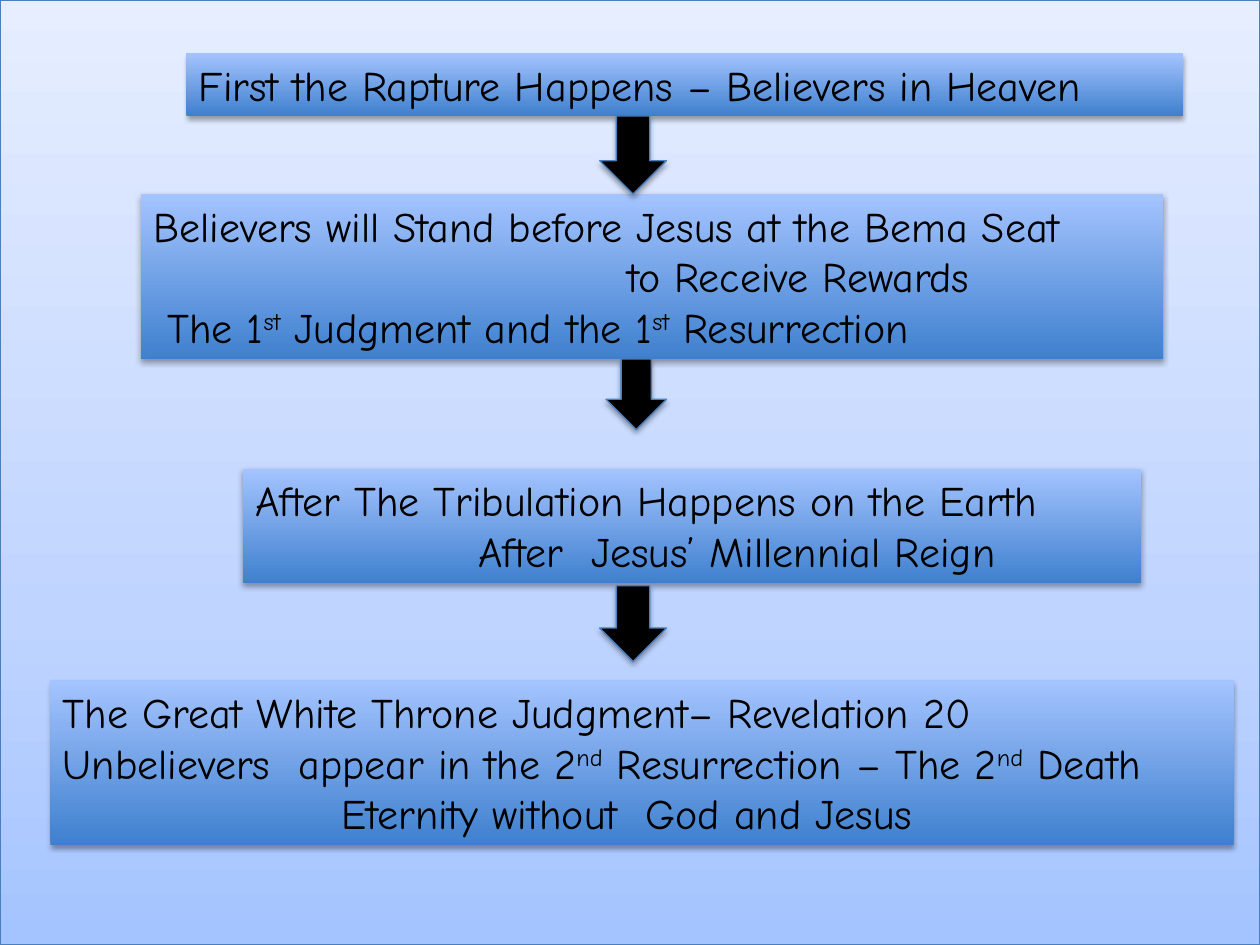
from dataclasses import dataclass

from lxml.etree import SubElement
from pptx import Presentation
from pptx.dml.color import RGBColor as RGB
from pptx.enum.shapes import MSO_SHAPE as SHAPE
from pptx.enum.text import MSO_ANCHOR as ANCHOR
from pptx.enum.text import MSO_AUTO_SIZE as AUTO
from pptx.enum.text import PP_ALIGN as ALIGN
from pptx.oxml.ns import qn
from pptx.util import Inches, Pt


@dataclass(frozen=True)
class Theme:
    font: str = "Comic Neue"
    size: int = 24
    ink: str = "000000"
    border: str = "4B7EBC"
    border_width: float = 0.75
    superscript: int = 30
    # Gradient stops run from bottom to top: (percent, colour)
    backdrop: tuple = ((0, "A4C4FF"), (35, "BFD4FF"), (100, "E6EEFF"))
    panel: tuple = ((0, "3F80CE"), (100, "A4C4FF"))


@dataclass(frozen=True)
class Box:
    left: float
    top: float
    width: float
    height: float


@dataclass(frozen=True)
class Line:
    text: str  # superscripts stand between ^ marks
    indent: float = 0


@dataclass(frozen=True)
class Step:
    box: Box
    lines: tuple


THEME = Theme()

STEPS = (
    Step(Box(1.48, 0.42, 7.91, 0.5), (
        Line("First the Rapture Happens – Believers in Heaven"),
    )),
    Step(Box(1.12, 1.54, 8.11, 1.31), (
        Line("Believers will Stand before Jesus at the Bema Seat"),
        Line("to Receive Rewards", 3.76),
        Line("The 1^st^ Judgment and the 1^st^ Resurrection", 0.11),
    )),
    Step(Box(1.93, 3.72, 7.13, 0.91), (
        Line("After The Tribulation Happens on the Earth"),
        Line("After  Jesus’ Millennial Reign", 1.77),
    )),
    Step(Box(0.4, 5.4, 9.39, 1.31), (
        Line("The Great White Throne Judgment– Revelation 20"),
        Line("Unbelievers  appear in the 2^nd^ Resurrection – The 2^nd^ Death"),
        Line("Eternity without  God and Jesus", 2.21),
    )),
)

ARROWS = (
    Box(4.76, 0.92, 0.53, 0.62),
    Box(4.81, 2.85, 0.48, 0.56),
    Box(4.76, 4.65, 0.53, 0.6),
)


def add_shape(slide, kind: SHAPE, box: Box):
    return slide.shapes.add_shape(
        kind, Inches(box.left), Inches(box.top), Inches(box.width), Inches(box.height))


def add_color(parent, value: str):
    return SubElement(parent, qn("a:srgbClr"), val=value)


def fill_gradient(sp, stops: tuple) -> None:
    sp.fill.gradient()
    sp.fill.gradient_angle = 90
    stop_list = next(sp._element.spPr.iter(qn("a:gsLst")))
    for old in list(stop_list):
        stop_list.remove(old)
    for percent, color in stops:
        add_color(SubElement(stop_list, qn("a:gs"), pos=str(percent * 1000)), color)


def add_shadow(sp, opacity: int = 35, distance: float = 1.8) -> None:
    sp.shadow.inherit = False
    effects = sp._element.spPr.find(qn("a:effectLst"))
    shadow = SubElement(
        effects, qn("a:outerShdw"), blurRad=str(Pt(3.1)), dist=str(Pt(distance)),
        dir="5400000", rotWithShape="0")
    SubElement(add_color(shadow, THEME.ink), qn("a:alpha"), val=str(opacity * 1000))


def add_border(sp) -> None:
    sp.line.color.rgb = RGB.from_string(THEME.border)
    sp.line.width = Pt(THEME.border_width)


def write_line(p, line: Line) -> None:
    p.alignment = ALIGN.LEFT
    p._p.get_or_add_pPr().set("marL", str(Inches(line.indent)))
    for i, part in enumerate(line.text.split("^")):
        r = p.add_run()
        r.text = part
        r.font.name = THEME.font
        r.font.size = Pt(THEME.size)
        r.font.color.rgb = RGB.from_string(THEME.ink)
        if i % 2:
            r._r.get_or_add_rPr().set("baseline", str(THEME.superscript * 1000))


def draw_backdrop(slide, box: Box) -> None:
    sp = add_shape(slide, SHAPE.RECTANGLE, box)
    fill_gradient(sp, THEME.backdrop)
    add_border(sp)
    add_shadow(sp, opacity=38, distance=1.6)


def draw_step(slide, step: Step) -> None:
    sp = add_shape(slide, SHAPE.RECTANGLE, step.box)
    fill_gradient(sp, THEME.panel)
    sp.line.fill.background()
    add_shadow(sp)
    tf = sp.text_frame
    tf.word_wrap = True
    tf.auto_size = AUTO.SHAPE_TO_FIT_TEXT
    tf.vertical_anchor = ANCHOR.TOP
    for i, line in enumerate(step.lines):
        write_line(tf.add_paragraph() if i else tf.paragraphs[0], line)


def draw_arrow(slide, box: Box) -> None:
    sp = add_shape(slide, SHAPE.DOWN_ARROW, box)
    sp.fill.solid()
    sp.fill.fore_color.rgb = RGB.from_string(THEME.ink)
    add_border(sp)
    add_shadow(sp)


def main() -> None:
    prs = Presentation()
    prs.slide_width, prs.slide_height = Inches(10), Inches(7.5)
    slide = prs.slides.add_slide(prs.slide_layouts[6])

    # Background panel
    draw_backdrop(slide, Box(0, 0, 10, 7.5))

    # Sequence of events
    for step in STEPS:
        draw_step(slide, step)

    # Arrows between the events
    for arrow in ARROWS:
        draw_arrow(slide, arrow)

    prs.save("out.pptx")


if __name__ == "__main__":
    main()
